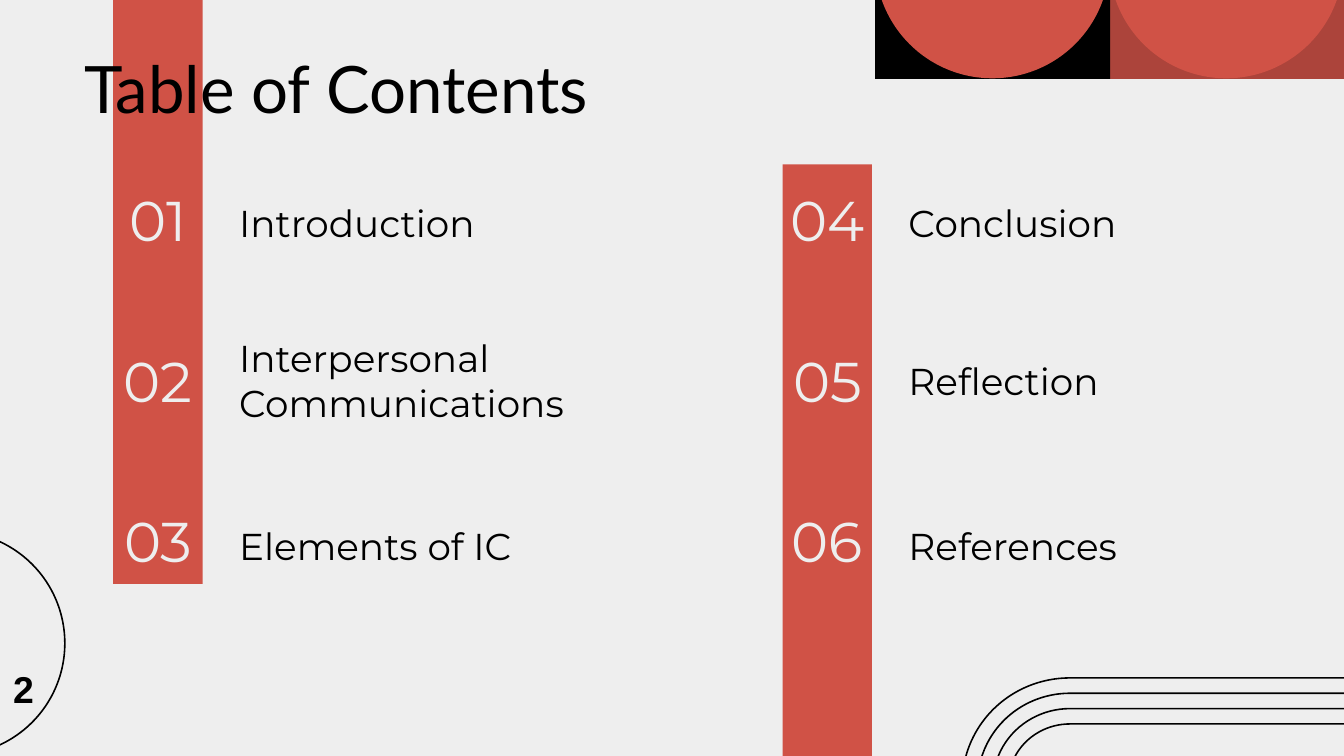
"""Build the table of contents slide."""
from lxml import etree
from pptx import Presentation
from pptx.dml.color import RGBColor
from pptx.enum.shapes import MSO_SHAPE
from pptx.enum.text import MSO_ANCHOR, MSO_AUTO_SIZE, PP_ALIGN
from pptx.oxml.ns import qn
from pptx.util import Cm, Pt

RECT, OVAL = MSO_SHAPE.RECTANGLE, MSO_SHAPE.OVAL
LEFT, CENTER = PP_ALIGN.LEFT, PP_ALIGN.CENTER
MIDDLE, TOP = MSO_ANCHOR.MIDDLE, MSO_ANCHOR.TOP
FIXED, GROW = MSO_AUTO_SIZE.NONE, MSO_AUTO_SIZE.SHAPE_TO_FIT_TEXT

COLORS = {"paper": "EEEEEE", "red": "D05246", "dark_red": "AC443B", "black": "000000"}

TITLE = "Table of Contents"
PAGE_NUMBER = "2"
COLUMNS = [
    ["Introduction", "Interpersonal Communications", "Elements of IC"],
    ["Conclusion", "Reflection", "References"],
]
LABEL_SIZE = (6.5, 1.12)
WRAPPED_SIZES = {"Interpersonal Communications": (7.11, 1.68)}

COLUMN_STEP = 12.65
BARS = [(-0.08, 11.12), (3.11, 11.18)]
NUMBER_CENTERS = [4.13, 7.18, 10.21]
LABEL_CENTERS = [4.21, 7.19, 10.31]
TILES = [(20.96, "dark_red"), (16.54, "black")]
TILE_TOP, TILE_SIZE, DISC_SIZE = -2.95, 4.44, 4.43
ARCH_X, ARCH_Y, ARCH_LENGTH = 20.22, 14.81, 5.89
ARCHES = [(2.01 - 0.29 * i, 2.05 - 0.29 * i) for i in range(4)]
RING_X, RING_Y, RING_RADIUS = -0.89, 12.16, 2.13
STROKE = 0.03


def rgb(name):
    return RGBColor.from_string(COLORS[name])


def paint(sp, color):
    sp.shadow.inherit = False
    sp.fill.solid()
    sp.fill.fore_color.rgb = rgb(color)
    sp.line.fill.background()


def add_filled(s, kind, color, *box):
    paint(s.shapes.add_shape(kind, *map(Cm, box)), color)


def add_curved(s, contours, arcs):
    """Draw filled contours, turning the numbered segments into arcs."""
    emu = [[(Cm(x), Cm(y)) for x, y in contour] for contour in contours]
    builder = s.shapes.build_freeform(*emu[0][0])
    for i, (start, *rest) in enumerate(emu):
        if i:
            builder.move_to(*start)
        builder.add_line_segments(rest)
    sp = builder.convert_to_shape()
    segments = list(sp.element.iter(qn("a:lnTo")))
    for index, (rx, ry, start, sweep) in arcs.items():
        arc = etree.Element(qn("a:arcTo"), wR=str(Cm(rx)), hR=str(Cm(ry)),
                            stAng=str(start * 60000), swAng=str(sweep * 60000))
        segment = segments[index]
        segment.getparent().replace(segment, arc)
    paint(sp, "black")
    return sp


def add_arch(s, rx, ry):
    top = ARCH_Y - (ARCH_LENGTH + ry) / 2
    center = ARCH_X + (ARCH_LENGTH - ry) / 2
    turn = top + ARCH_LENGTH
    ix, iy = rx - STROKE, ry - STROKE
    points = [(center - rx, top), (center - rx, turn), (center, turn + ry),
              (center + rx, turn), (center + rx, top), (center + ix, top),
              (center + ix, turn), (center, turn + iy), (center - ix, turn),
              (center - ix, top)]
    arcs = {1: (rx, ry, 180, -90), 2: (rx, ry, 90, -90),
            6: (ix, iy, 0, 90), 7: (ix, iy, 90, 90)}
    add_curved(s, [points], arcs).rotation = 90


def add_ring(s):
    contours, arcs = [], {}
    for i, r in enumerate((RING_RADIUS, RING_RADIUS - STROKE)):
        contours.append([(RING_X, RING_Y - r), (RING_X + r, RING_Y), (RING_X, RING_Y + r),
                         (RING_X - r, RING_Y), (RING_X, RING_Y - r)])
        for quarter in range(4):
            arcs[4 * i + quarter] = (r, r, (270 + 90 * quarter) % 360, 90)
    add_curved(s, contours, arcs)


def write(sp, text, size, font, color="black", align=LEFT, anchor=MIDDLE, inset=0.25, bold=False):
    tf = sp.text_frame
    tf.word_wrap = True
    tf.auto_size = FIXED
    tf.vertical_anchor = anchor
    tf.margin_left = tf.margin_right = Cm(0.25)
    tf.margin_top = tf.margin_bottom = Cm(inset)
    p = tf.paragraphs[0]
    p.alignment = align
    r = p.add_run()
    r.text = text
    r.font.size = Pt(size)
    r.font.name = font
    r.font.bold = bold
    r.font.color.rgb = rgb(color)


def add_text(s, box, *args, **style):
    sp = s.shapes.add_textbox(*map(Cm, box))
    write(sp, *args, **style)
    return sp


def add_entry(s, column, row, label):
    shift = column * COLUMN_STEP
    number = column * len(NUMBER_CENTERS) + row + 1
    width, height = WRAPPED_SIZES.get(label, LABEL_SIZE)
    label_top = LABEL_CENTERS[row] - height / 2
    add_text(s, (4.27 + shift, label_top, width, height), label, 20, "Montserrat")
    add_text(s, (1.86 + shift, NUMBER_CENTERS[row] - 0.82, 2.26, 1.65),
             f"{number:02}", 30, "Montserrat", "paper", CENTER)


def main():
    prs = Presentation()
    prs.slide_width, prs.slide_height = Cm(25.4), Cm(14.29)
    s = prs.slides.add_slide(prs.slide_layouts[5])
    s.background.fill.solid()
    s.background.fill.fore_color.rgb = rgb("paper")

    for x, color in TILES:
        add_filled(s, RECT, color, x, TILE_TOP, TILE_SIZE, TILE_SIZE)
        add_filled(s, OVAL, "red", x, TILE_TOP, DISC_SIZE, DISC_SIZE)
    for rx, ry in ARCHES:
        add_arch(s, rx, ry)
    add_ring(s)

    for i, (top, height) in enumerate(BARS):
        add_filled(s, RECT, "red", 2.14 + i * COLUMN_STEP, top, 1.69, height)
    for column, labels in enumerate(COLUMNS):
        for row, label in enumerate(labels):
            add_entry(s, column, row, label)

    title = s.shapes.title
    title.left, title.top, title.width, title.height = map(Cm, (1.35, 0.86, 12.95, 1.6))
    write(title, TITLE, 35, "Lato")
    s.shapes.element.append(title.element)

    page = add_text(s, (0, 12.47, 0.84, 1.11), PAGE_NUMBER, 20, "Arial",
                    anchor=TOP, inset=0.13, bold=True)
    page.text_frame.auto_size = GROW
    prs.save("out.pptx")


if __name__ == "__main__":
    main()
